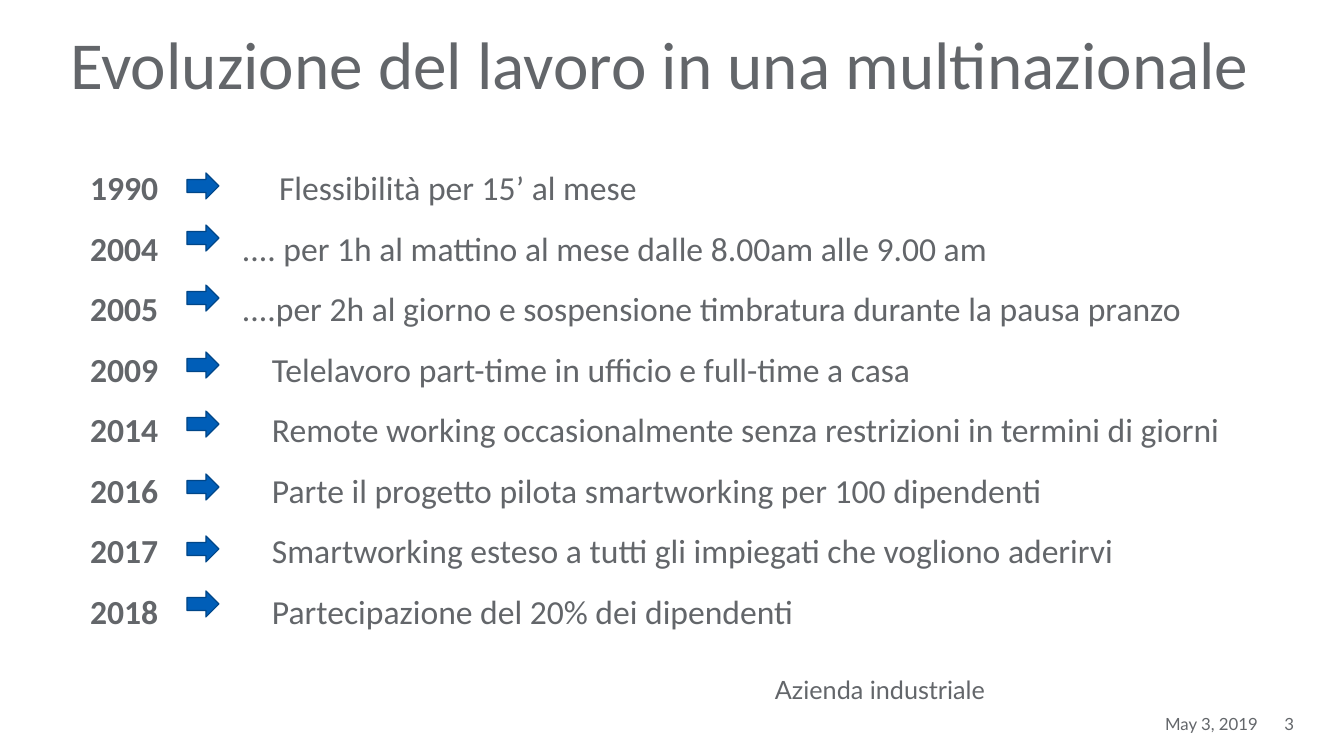
from lxml.etree import SubElement
from pptx import Presentation
from pptx.dml.color import RGBColor
from pptx.enum.shapes import MSO_SHAPE
from pptx.enum.text import MSO_ANCHOR, PP_ALIGN
from pptx.oxml.ns import qn
from pptx.util import Pt

EMU_PER_PX = 914400 / 100.8
GREY, BLUE, NAVY = "63666A", "005EB8", "004688"
DOTTED, INDENTED = 152, 182

MILESTONES = [
    ("1990", "Flessibilità per 15’ al mese", 189, 26),
    ("2004", ".... per 1h al mattino al mese dalle 8.00am alle 9.00 am", DOTTED, 78),
    ("2005", "....per 2h al giorno e sospensione timbratura durante la pausa pranzo", DOTTED, 138),
    ("2009", "Telelavoro part-time in ufficio e full-time a casa", INDENTED, 205),
    ("2014", "Remote working occasionalmente senza restrizioni in termini di giorni", INDENTED, 264),
    ("2016", "Parte il progetto pilota smartworking per 100 dipendenti", INDENTED, 327),
    ("2017", "Smartworking esteso a tutti gli impiegati che vogliono aderirvi", INDENTED, 389),
    ("2018", "Partecipazione del 20% dei dipendenti", INDENTED, 444),
]


def px(length):
    return round(length * EMU_PER_PX)


def color(hex_string):
    return RGBColor.from_string(hex_string)


def place(shape, box):
    shape.left, shape.top, shape.width, shape.height = map(px, box)


def prepare_frame(shape, anchor=MSO_ANCHOR.TOP):
    frame = shape.text_frame
    frame.word_wrap = True
    frame.vertical_anchor = anchor
    frame.margin_left = frame.margin_top = frame.margin_right = frame.margin_bottom = 0
    return frame


def add_span(para, text, size, font, bold=False):
    span = para.add_run()
    span.text = text
    span.font.size = Pt(size)
    span.font.name = font
    span.font.bold = bold
    span.font.color.rgb = color(GREY)


def add_title(page, box, text):
    title = page.shapes.title
    place(title, box)
    para = prepare_frame(title, MSO_ANCHOR.MIDDLE).paragraphs[0]
    para.alignment = PP_ALIGN.LEFT
    para.line_spacing = 0.9
    add_span(para, text, 48, "Calibri")


def add_label(page, box, text, size, align=PP_ALIGN.LEFT):
    label = page.shapes.add_textbox(*map(px, box))
    para = prepare_frame(label).paragraphs[0]
    para.alignment = align
    add_span(para, text, size, "Lato")


def add_tab_stop(para, position):
    stops = SubElement(para._p.get_or_add_pPr(), qn("a:tabLst"))
    SubElement(stops, qn("a:tab"), pos=str(px(position)), algn="l")


def add_arrow(page, box):
    arrow = page.shapes.add_shape(MSO_SHAPE.RIGHT_ARROW, *map(px, box))
    arrow.shadow.inherit = False
    arrow.fill.solid()
    arrow.fill.fore_color.rgb = color(BLUE)
    arrow.line.color.rgb = color(NAVY)
    arrow.line.width = Pt(0.85)


def add_timeline(page, box):
    left, top, width, height = box
    frame = prepare_frame(page.shapes.add_textbox(*map(px, box)))
    for index, (year, event, text_offset, arrow_offset) in enumerate(MILESTONES):
        para = frame.add_paragraph() if index else frame.paragraphs[0]
        para.line_spacing = 1.5
        add_tab_stop(para, text_offset)
        add_span(para, year, 24, "Calibri", bold=True)
        add_span(para, "\t" + event, 24, "Calibri")
        add_arrow(page, (left + 97, top + arrow_offset, 32, 26))


def add_footer(page, box):
    left, top, width, height = box
    number_width = 36
    date_width = width - number_width
    add_label(page, (left, top, date_width, height), "May 3, 2019", 12, PP_ALIGN.RIGHT)
    add_label(page, (left + date_width, top, number_width, height), "3", 12, PP_ALIGN.RIGHT)


def main():
    deck = Presentation()
    deck.slide_width, deck.slide_height = px(1344), px(756)
    page = deck.slides.add_slide(deck.slide_layouts[5])
    add_title(page, (70, 18, 1205, 100), "Evoluzione del lavoro in una multinazionale")
    add_footer(page, (1051, 714, 243, 20))
    add_timeline(page, (90, 147, 1171, 549))
    add_label(page, (775, 674, 501, 30), "Azienda industriale", 18)
    deck.save("out.pptx")


if __name__ == "__main__":
    main()
